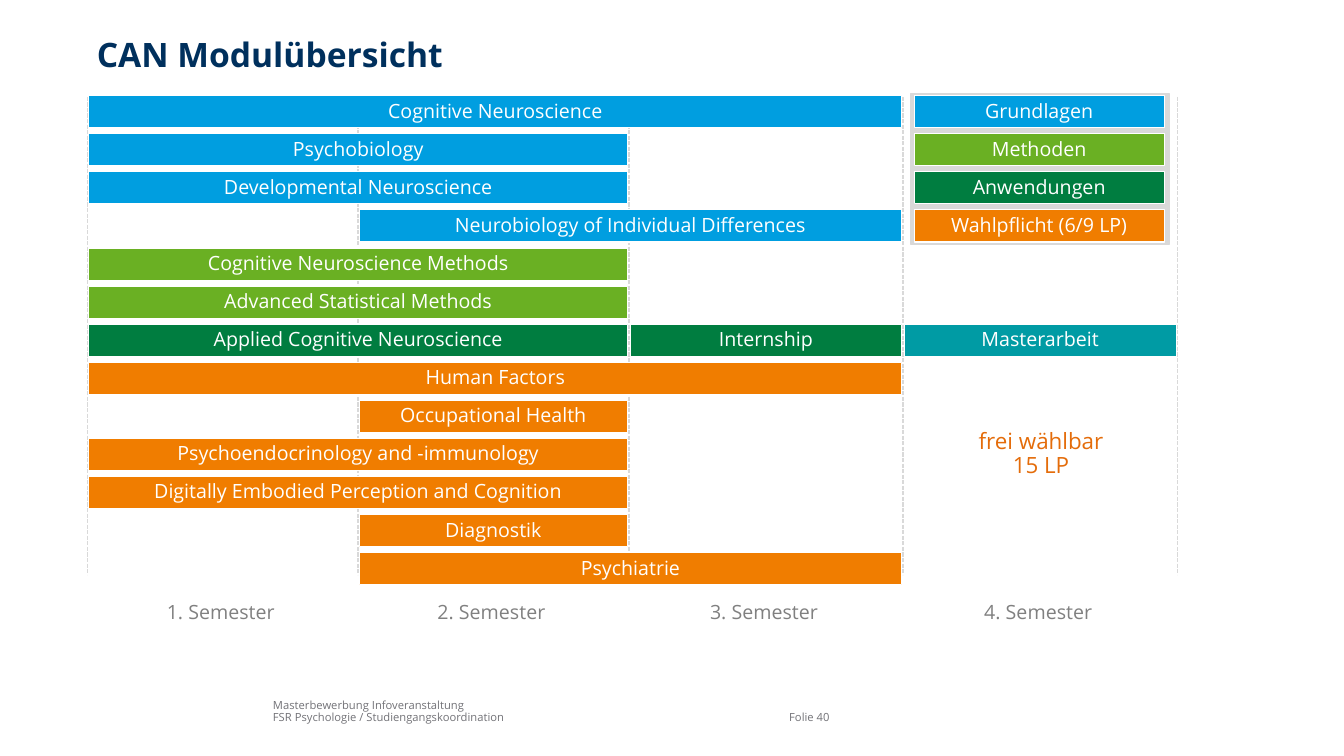
from dataclasses import dataclass

from lxml import etree
from pptx import Presentation
from pptx import util as u
from pptx.dml.color import RGBColor
from pptx.enum import dml, shapes, text
from pptx.oxml import ns


@dataclass(frozen=True)
class Theme:
    font: str = "Open Sans"
    title_color: str = "00305D"
    basics: str = "009EE0"
    methods: str = "6AB023"
    applied: str = "007D40"
    elective: str = "F07D00"
    thesis: str = "009BA4"
    free_choice: str = "E46C0A"
    label: str = "808080"
    footer: str = "727277"
    rule: str = "D9D9D9"
    white: str = "FFFFFF"
    title_size: float = 24
    note_size: float = 16
    body_size: float = 14
    footer_size: float = 8
    line_spacing: float = 0.9


class ModulePage:
    def __init__(self, deck, theme):
        self.theme = theme
        self.page = deck.slides.add_slide(deck.slide_layouts[5])

    def set_text(self, shape, content, size, color, align=text.PP_ALIGN.CENTER,
                 anchor=text.MSO_ANCHOR.MIDDLE, bold=False, inset=True):
        frame = shape.text_frame
        frame.text = content
        frame.word_wrap = True
        frame.auto_size = text.MSO_AUTO_SIZE.NONE
        frame.vertical_anchor = anchor
        if not inset:
            frame.margin_left = frame.margin_right = 0
            frame.margin_top = frame.margin_bottom = 0
        for paragraph in frame.paragraphs:
            paragraph.alignment = align
            paragraph.line_spacing = self.theme.line_spacing
            for span in paragraph.runs:
                span.font.name = self.theme.font
                span.font.size = u.Pt(size)
                span.font.bold = bold
                span.font.color.rgb = RGBColor.from_string(color)

    def title(self, content, left, top, width, height):
        box = self.page.shapes.title
        box.left, box.top = u.Cm(left), u.Cm(top)
        box.width, box.height = u.Cm(width), u.Cm(height)
        self.set_text(box, content, self.theme.title_size, self.theme.title_color,
                      text.PP_ALIGN.LEFT, text.MSO_ANCHOR.TOP, bold=True, inset=False)

    def label(self, content, left, top, width, height, size, color, **style):
        box = self.page.shapes.add_textbox(
            u.Cm(left), u.Cm(top), u.Cm(width), u.Cm(height))
        self.set_text(box, content, size, color, **style)

    def footer(self, content, left, width):
        self.label(content, left, 17.24, width, 1, self.theme.footer_size,
                   self.theme.footer, align=text.PP_ALIGN.LEFT,
                   anchor=text.MSO_ANCHOR.BOTTOM, inset=False)

    def panel(self, left, top, width, height, fill, outline, weight):
        box = self.page.shapes.add_shape(
            shapes.MSO_SHAPE.RECTANGLE,
            u.Cm(left), u.Cm(top), u.Cm(width), u.Cm(height))
        box.shadow.inherit = False
        box.fill.solid()
        box.fill.fore_color.rgb = RGBColor.from_string(fill)
        box.line.color.rgb = RGBColor.from_string(outline)
        box.line.width = u.Pt(weight)
        return box

    def bar(self, content, left, top, width, height, fill):
        box = self.panel(left, top, width, height, fill, self.theme.white, 0.75)
        self.set_text(box, content, self.theme.body_size, self.theme.white)

    def divider(self, x, top, bottom):
        """Draw a dashed vertical line between two semesters."""
        line = self.page.shapes.add_connector(
            shapes.MSO_CONNECTOR.STRAIGHT, u.Cm(x), u.Cm(top), u.Cm(x), u.Cm(bottom))
        line.line.color.rgb = RGBColor.from_string(self.theme.rule)
        line.line.width = u.Pt(1)
        line.line.dash_style = dml.MSO_LINE.SQUARE_DOT
        etree.SubElement(line._element.spPr, ns.qn("a:effectLst"))


SEMESTER_EDGES = [2.21, 9.02, 15.85, 22.76, 29.67]
FIRST_ROW, ROW_STEP, BAR_HEIGHT, BAR_GAP = 2.41, 0.96, 0.81, 0.03


def main():
    theme = Theme()
    deck = Presentation()
    deck.slide_width, deck.slide_height = u.Cm(33.87), u.Cm(19.05)
    page = ModulePage(deck, theme)

    page.title("CAN Modulübersicht", 2.44, 0.97, 29.39, 1.9)
    page.footer("Masterbewerbung Infoveranstaltung\n"
                "FSR Psychologie / Studiengangskoordination", 6.88, 12.45)
    page.footer("Folie 40", 19.89, 1.96)

    for edge in SEMESTER_EDGES:
        page.divider(edge, 2.44, 14.48)
    for number, (left, right) in enumerate(zip(SEMESTER_EDGES, SEMESTER_EDGES[1:]), 1):
        page.label(f"{number}. Semester", left - 0.05, 15.05, right - left, 0.86,
                   theme.body_size, theme.label, anchor=text.MSO_ANCHOR.TOP)

    # Module, row, first semester, last semester, colour
    modules = [
        ("Cognitive Neuroscience", 0, 1, 3, theme.basics),
        ("Psychobiology", 1, 1, 2, theme.basics),
        ("Developmental Neuroscience", 2, 1, 2, theme.basics),
        ("Neurobiology of Individual Differences", 3, 2, 3, theme.basics),
        ("Cognitive Neuroscience Methods", 4, 1, 2, theme.methods),
        ("Advanced Statistical Methods", 5, 1, 2, theme.methods),
        ("Applied Cognitive Neuroscience", 6, 1, 2, theme.applied),
        ("Internship", 6, 3, 3, theme.applied),
        ("Masterarbeit", 6, 4, 4, theme.thesis),
        ("Human Factors", 7, 1, 3, theme.elective),
        ("Occupational Health", 8, 2, 2, theme.elective),
        ("Psychoendocrinology and -immunology", 9, 1, 2, theme.elective),
        ("Digitally Embodied Perception and Cognition", 10, 1, 2, theme.elective),
        ("Diagnostik", 11, 2, 2, theme.elective),
        ("Psychiatrie", 12, 2, 3, theme.elective),
    ]
    for name, row, first, last, color in modules:
        left = SEMESTER_EDGES[first - 1] + BAR_GAP
        right = SEMESTER_EDGES[last] - BAR_GAP
        page.bar(name, left, FIRST_ROW + row * ROW_STEP, right - left, BAR_HEIGHT, color)

    page.label("frei wählbar\n15 LP", 22.78, 9.14, 6.91, 4.6,
               theme.note_size, theme.free_choice)

    page.panel(22.96, 2.36, 6.5, 3.81, theme.rule, theme.rule, 1)
    legend = [
        ("Grundlagen", theme.basics),
        ("Methoden", theme.methods),
        ("Anwendungen", theme.applied),
        ("Wahlpflicht (6/9 LP)", theme.elective),
    ]
    for row, (name, color) in enumerate(legend):
        page.bar(name, 23.04, FIRST_ROW + row * ROW_STEP, 6.3, BAR_HEIGHT, color)

    deck.save("out.pptx")


if __name__ == "__main__":
    main()
